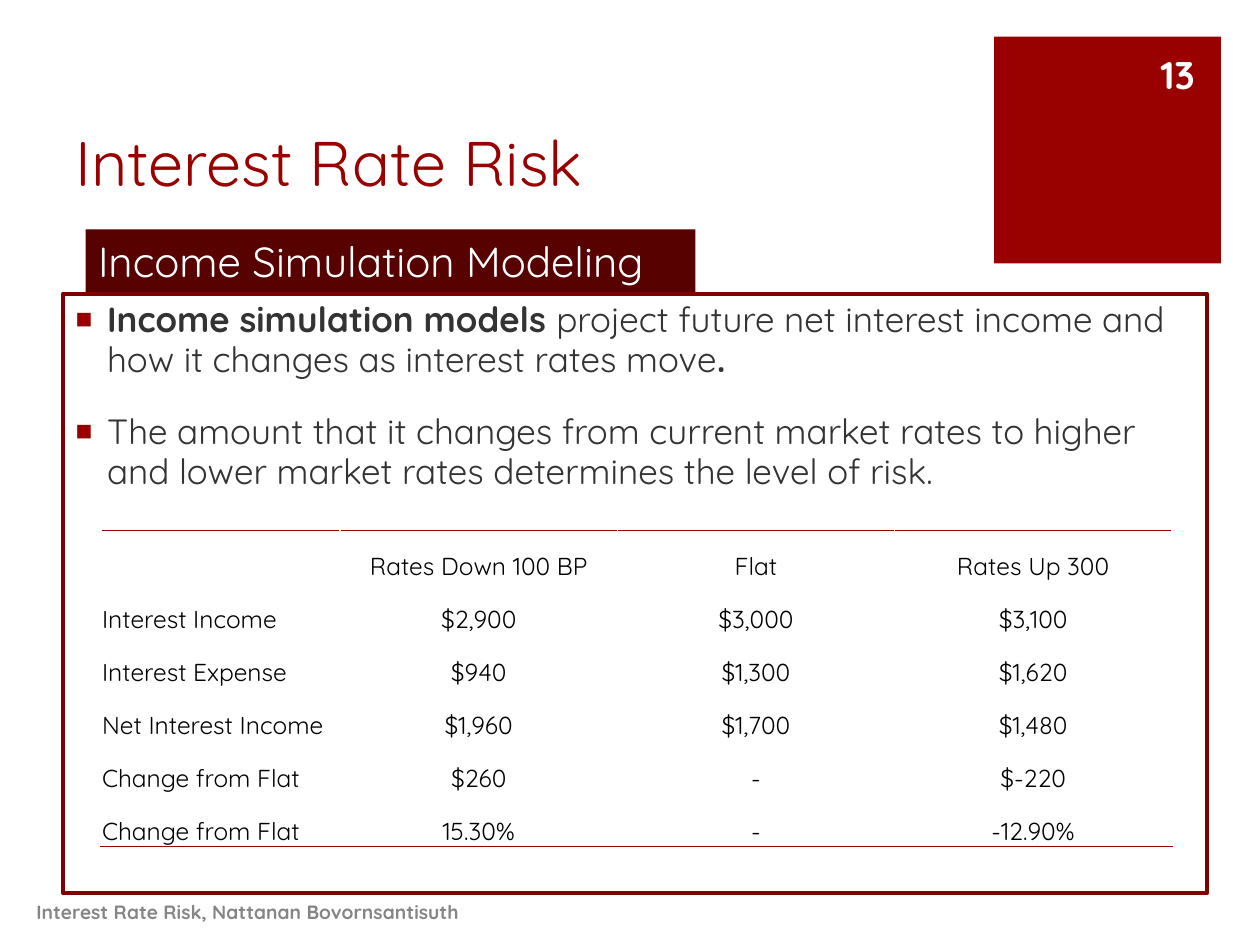
from lxml import etree
from pptx import Presentation
from pptx.dml.color import RGBColor
from pptx.enum.shapes import MSO_SHAPE
from pptx.enum.text import MSO_ANCHOR, MSO_AUTO_SIZE, PP_ALIGN
from pptx.oxml.ns import qn
from pptx.util import Pt

PX = 9144
FONT = "Quicksand"
RED = RGBColor(0x99, 0x00, 0x00)
FRAME = RGBColor(0x80, 0x00, 0x00)
DARK = RGBColor(0x58, 0x01, 0x01)
INK = RGBColor(0x33, 0x33, 0x33)
GRAY = RGBColor(0x85, 0x85, 0x85)
BLACK = RGBColor(0, 0, 0)
WHITE = RGBColor(0xFF, 0xFF, 0xFF)
RECT = MSO_SHAPE.RECTANGLE
LEFT, MID, RIGHT = PP_ALIGN.LEFT, PP_ALIGN.CENTER, PP_ALIGN.RIGHT
TOP, CENTER, BOTTOM = MSO_ANCHOR.TOP, MSO_ANCHOR.MIDDLE, MSO_ANCHOR.BOTTOM
FIXED = MSO_AUTO_SIZE.NONE

POINTS = [
    [("Income simulation models ", True),
     ("project future net interest income and how it changes as interest rates move", False),
     (".", True)],
    [("The amount that it changes from current market rates to higher and lower "
      "market rates determines the level of risk.", False)],
]
ROWS = [
    ("", "Rates Down 100 BP", "Flat", "Rates Up 300"),
    ("Interest Income", "$2,900", "$3,000", "$3,100"),
    ("Interest Expense", "$940", "$1,300", "$1,620"),
    ("Net Interest Income", "$1,960", "$1,700", "$1,480"),
    ("Change from Flat", "$260", "-", "$-220"),
    ("Change from Flat", "15.30%", "-", "-12.90%"),
]


def emu(*box):
    """Turn px lengths into EMU."""
    return [v * PX for v in box]


def style(font, size, color, bold=False):
    """Set the look of a font."""
    font.name, font.size, font.bold = FONT, Pt(size), bold
    font.color.rgb = color


def write(frame, text, size, color, bold=False, align=LEFT, anchor=CENTER):
    """Put one line of styled text in a frame."""
    frame.text = text
    frame.word_wrap = True
    frame.vertical_anchor = anchor
    para = frame.paragraphs[0]
    para.alignment = align
    for run in para.runs:
        style(run.font, size, color, bold)


def place(shape, box):
    """Move a shape to its box."""
    shape.left, shape.top, shape.width, shape.height = emu(*box)


def block(slide, box, color):
    """Draw a plain filled rectangle."""
    shape = slide.shapes.add_shape(RECT, *emu(*box))
    shape.shadow.inherit = False
    shape.fill.solid()
    shape.fill.fore_color.rgb = color
    shape.line.fill.background()
    return shape


def label(slide, box, *args, **look):
    """Add a text box with one line."""
    write(slide.shapes.add_textbox(*emu(*box)).text_frame, *args, **look)


def title(slide, box):
    """Fill the title placeholder."""
    shape = slide.shapes.title
    place(shape, box)
    shape.text_frame.auto_size = FIXED
    write(shape.text_frame, "Interest Rate Risk", 36, RED, anchor=BOTTOM)


def bullet(para):
    """Give a paragraph a red square and a hanging indent."""
    props = para._p.get_or_add_pPr()
    props.set("marL", str(25 * PX))
    props.set("indent", str(-25 * PX))
    color = etree.SubElement(props, qn("a:buClr"))
    etree.SubElement(color, qn("a:srgbClr"), val=str(RED))
    etree.SubElement(props, qn("a:buSzPct"), val="80000")
    etree.SubElement(props, qn("a:buChar"), char="■")


def body(slide, box):
    """Fill the framed body placeholder with the points."""
    shape = slide.placeholders[1]
    place(shape, box)
    shape.line.color.rgb = FRAME
    shape.line.width = Pt(2.25)
    frame = shape.text_frame
    frame.auto_size = FIXED
    frame.vertical_anchor = TOP
    for i, point in enumerate(POINTS):
        para = frame.add_paragraph() if i else frame.paragraphs[0]
        para.space_before = Pt(18)
        para.line_spacing = 0.96
        bullet(para)
        for text, bold in point:
            run = para.add_run()
            run.text = text
            style(run.font, 20, INK, bold)


def rule(cell, side):
    """Draw a thin red border on one side of a cell."""
    props = cell._tc.get_or_add_tcPr()
    line = etree.Element(qn("a:" + side), w=str(Pt(1)))
    fill = etree.SubElement(line, qn("a:solidFill"))
    etree.SubElement(fill, qn("a:srgbClr"), val=str(RED))
    props.insert(0, line)


def rates(slide, box):
    """Build the table of rate cases."""
    last = len(ROWS) - 1
    table = slide.shapes.add_table(len(ROWS), len(ROWS[0]), *emu(*box)).table
    table.first_row = table.horz_banding = False
    for c, col in enumerate(table.columns):
        col.width = (220 if c else 190) * PX
    for r, row in enumerate(ROWS):
        table.rows[r].height = (42 if r else 41) * PX
        for c, text in enumerate(row):
            cell = table.cell(r, c)
            cell.fill.background()
            cell.margin_left = cell.margin_right = cell.margin_top = PX
            cell.margin_bottom = 0
            write(cell.text_frame, text, 14, BLACK, align=MID if c else LEFT)
            cell.vertical_anchor = BOTTOM
            if r == 0:
                rule(cell, "lnT")
            if r == last:
                rule(cell, "lnB")


def badge(slide, box):
    """Draw the red square with the page number."""
    x, y, w, h = box
    block(slide, box, RED)
    label(slide, (x + 114, y + 10, 55, 40), "13", 22, WHITE, True, align=RIGHT)


def tag(slide, box):
    """Draw the dark heading tab above the body."""
    shape = block(slide, box, DARK)
    write(shape.text_frame, "Income Simulation Modeling", 24, WHITE, anchor=TOP)


def main():
    """Build and save the slide."""
    deck = Presentation()
    deck.slide_width, deck.slide_height = emu(1000, 750)
    slide = deck.slides.add_slide(deck.slide_layouts[1])
    badge(slide, (789, 29, 180, 180))
    title(slide, (50, 38, 712, 125))
    body(slide, (50, 233, 908, 476))
    label(slide, (19, 704, 657, 40), "Interest Rate Risk, Nattanan Bovornsantisuth",
          11, GRAY, True)
    tag(slide, (68, 182, 484, 50))
    rates(slide, (80, 421, 850, 251))
    deck.save("out.pptx")


if __name__ == "__main__":
    main()
